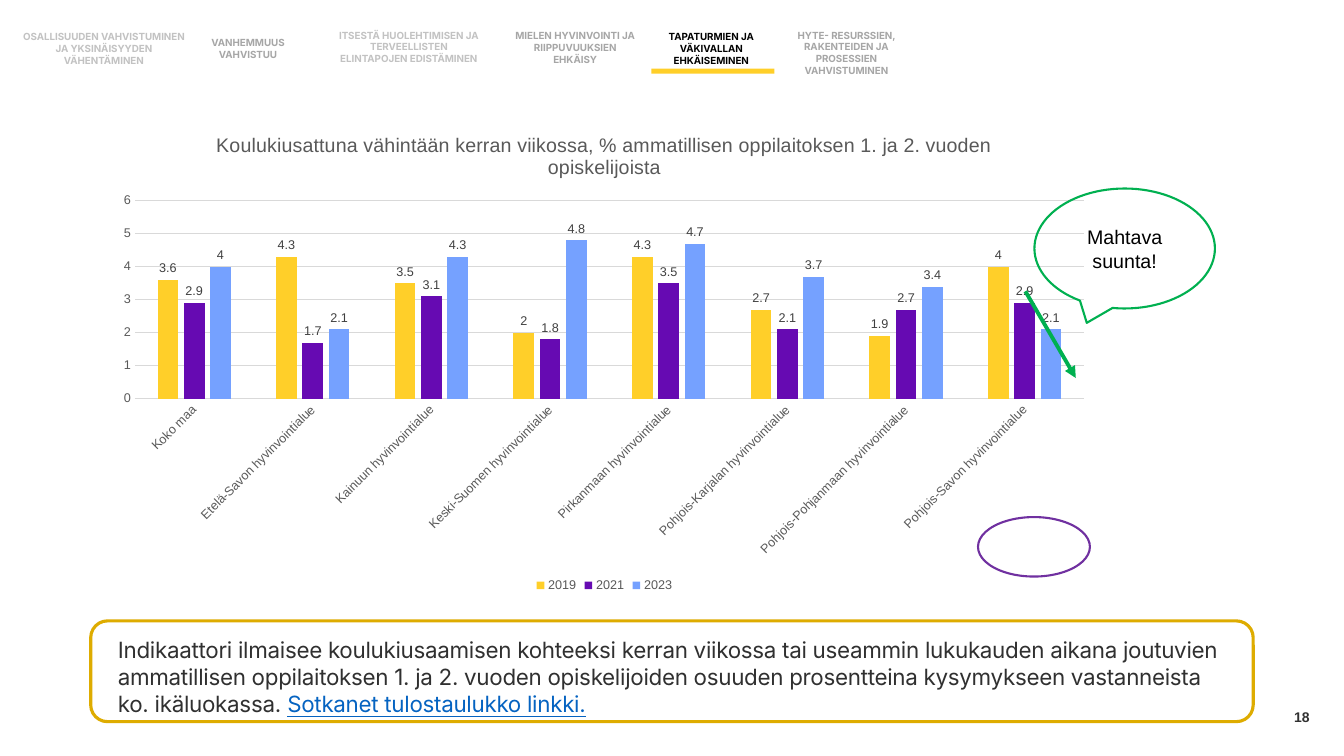
from lxml import etree
from pptx import Presentation
from pptx.chart.data import CategoryChartData
from pptx.dml.color import RGBColor
from pptx.enum.chart import XL_CHART_TYPE, XL_LABEL_POSITION, XL_LEGEND_POSITION, XL_TICK_MARK
from pptx.enum.shapes import MSO_CONNECTOR, MSO_SHAPE
from pptx.enum.text import MSO_ANCHOR, MSO_AUTO_SIZE, PP_ALIGN
from pptx.oxml import parse_xml
from pptx.oxml.ns import nsdecls, qn
from pptx.util import Inches, Pt

YELLOW, VIOLET, BLUE, GREEN = "FFCF29", "660AB2", "75A1FF", "00B050"
GRID, AXIS_TEXT = "D9D9D9", "595959"
LEFT, CENTER, RIGHT = PP_ALIGN.LEFT, PP_ALIGN.CENTER, PP_ALIGN.RIGHT


def rgb(value):
    return RGBColor.from_string(value)


def set_font(font, color, **fmt):
    for name, value in fmt.items():
        setattr(font, name, Pt(value) if name == "size" else value)
    font.color.rgb = rgb(color)


class SlideBuilder:
    def __init__(self, slide):
        self.s = slide

    def fill_text(self, tf, paragraphs, align, color, **fmt):
        tf.word_wrap = True
        for i, text in enumerate(paragraphs):
            p = tf.paragraphs[0] if i == 0 else tf.add_paragraph()
            p.alignment = align
            r = p.add_run()
            r.text = text
            set_font(r.font, color, **fmt)

    def text(self, box, paragraphs, align, color, anchor=MSO_ANCHOR.MIDDLE, grow=False, **fmt):
        tf = self.s.shapes.add_textbox(*map(Inches, box)).text_frame
        for side in ("left", "top", "right", "bottom"):
            setattr(tf, f"margin_{side}", 0)
        tf.vertical_anchor = anchor
        if grow:
            tf.auto_size = MSO_AUTO_SIZE.SHAPE_TO_FIT_TEXT
        self.fill_text(tf, paragraphs, align, color, **fmt)
        return tf

    def shape(self, kind, box, fill=None, line=None, width=1.5):
        sp = self.s.shapes.add_shape(kind, *map(Inches, box))
        sp.shadow.inherit = False
        for part, color in ((sp.fill, fill), (sp.line.fill, line)):
            if color:
                part.solid()
                part.fore_color.rgb = rgb(color)
            else:
                part.background()
        if line:
            sp.line.width = Pt(width)
        return sp

    def arrow(self, start, end, color, width):
        line = self.s.shapes.add_connector(MSO_CONNECTOR.STRAIGHT, *map(Inches, start + end))
        line.line.color.rgb = rgb(color)
        line.line.width = Pt(width)
        etree.SubElement(line.line._get_or_add_ln(), qn("a:tailEnd"), type="triangle")
        etree.SubElement(line._element.spPr, qn("a:effectLst"))

    def column_chart(self, box, title, categories, series, plot_area):
        data = CategoryChartData()
        data.categories = categories
        for name, _, values in series:
            data.add_series(name, values)
        chart = self.s.shapes.add_chart(
            XL_CHART_TYPE.COLUMN_CLUSTERED, *map(Inches, box), data).chart
        set_font(chart.font, "000000", size=10, name="Arial")
        small = {"color": AXIS_TEXT, "size": 9, "name": "Arial"}

        # Title and legend
        self.fill_text(chart.chart_title.text_frame, [title], CENTER, AXIS_TEXT,
                       size=14, name="Arial", bold=False)
        chart.chart_title.include_in_layout = False
        chart.has_legend = True
        chart.legend.position = XL_LEGEND_POSITION.BOTTOM
        chart.legend.include_in_layout = False
        set_font(chart.legend.font, **small)

        # Axes
        for axis in (chart.category_axis, chart.value_axis):
            axis.major_tick_mark = axis.minor_tick_mark = XL_TICK_MARK.NONE
            set_font(axis.tick_labels.font, **small)
        cat, val = chart.category_axis, chart.value_axis
        cat._element.txPr.find(qn("a:bodyPr")).set("rot", "-2700000")
        val.minimum_scale, val.maximum_scale, val.major_unit = 0, 6, 1
        val.format.line.fill.background()
        for line in (cat.format.line, val.major_gridlines.format.line):
            line.color.rgb = rgb(GRID)
            line.width = Pt(0.75)

        # Columns and their values
        plot = chart.plots[0]
        plot.vary_by_categories = False
        plot.gap_width, plot.overlap = 219, -27
        for column, (_, color, _) in zip(plot.series, series):
            column.format.fill.solid()
            column.format.fill.fore_color.rgb = rgb(color)
            labels = column.data_labels
            labels.show_value = True
            labels.position = XL_LABEL_POSITION.OUTSIDE_END
            set_font(labels.font, "404040", size=9, name="Arial")

        # Fixed inner plot area
        area = chart._chartSpace.chart.plotArea
        for old in area.findall(qn("c:layout")):
            area.remove(old)
        sizes = "".join(f'<c:{k} val="{v}"/>' for k, v in zip("xywh", plot_area))
        area.insert(0, parse_xml(
            f'<c:layout {nsdecls("c")}><c:manualLayout><c:layoutTarget val="inner"/>'
            f'<c:xMode val="edge"/><c:yMode val="edge"/>{sizes}</c:manualLayout></c:layout>'))


def main():
    prs = Presentation()
    prs.slide_width, prs.slide_height = Inches(13.33), Inches(7.5)
    b = SlideBuilder(prs.slides.add_slide(prs.slide_layouts[6]))

    # Page number
    b.text((9.99, 6.91, 3, 0.4), ["18"], RIGHT, "313131", size=10, name="Arial", bold=True)

    # Theme navigation, the current theme in black
    themes = [
        ((0.22, 0.36, 1.62, 0.24), "C2C2C2",
         ["OSALLISUUDEN VAHVISTUMINEN JA YKSINÄISYYDEN VÄHENTÄMINEN"]),
        ((1.85, 0.42, 1.22, 0.12), "A6A6A6", ["VANHEMMUUS VAHVISTUU"]),
        ((3.35, 0.29, 1.41, 0.35), "C2C2C2",
         ["ITSESTÄ HUOLEHTIMISEN JA TERVEELLISTEN ELINTAPOJEN EDISTÄMINEN"]),
        ((5.07, 0.35, 1.27, 0.24), "A6A6A6", ["MIELEN HYVINVOINTI JA RIIPPUVUUKSIEN EHKÄISY"]),
        ((6.42, 0.36, 1.27, 0.24), "000000", ["TAPATURMIEN JA VÄKIVALLAN EHKÄISEMINEN"]),
        ((7.69, 0.35, 1.41, 0.35), "A6A6A6",
         ["HYTE- RESURSSIEN, RAKENTEIDEN JA PROSESSIEN", "VAHVISTUMINEN"]),
    ]
    for box, color, paragraphs in themes:
        b.text(box, paragraphs, CENTER, color, grow=True, size=7, name="Inter", bold=True)
    b.shape(MSO_SHAPE.RECTANGLE, (6.46, 0.68, 1.22, 0.05), fill=YELLOW)

    # Indicator description in a frame
    tf = b.text((1.17, 6.31, 10.96, 1.13), [
        "Indikaattori ilmaisee koulukiusaamisen kohteeksi kerran viikossa tai useammin "
        "lukukauden aikana joutuvien ammatillisen oppilaitoksen 1. ja 2. vuoden "
        "opiskelijoiden osuuden prosentteina kysymykseen vastanneista ko. ikäluokassa. "],
        LEFT, "303030", anchor=MSO_ANCHOR.TOP, size=16, name="Inter")
    p = tf.paragraphs[0]
    r = p.add_run()
    r.text = "Sotkanet tulostaulukko linkki."
    set_font(r.font, "0563C1", size=16, name="Inter", underline=True)
    for r in p.runs:
        r.font._element.set("spc", "-20")
    b.shape(MSO_SHAPE.ROUNDED_RECTANGLE, (0.9, 6.16, 11.53, 1), line="DEAC00", width=2.25)

    # Bullying by region and year
    regions = ["Etelä-Savon", "Kainuun", "Keski-Suomen", "Pirkanmaan",
               "Pohjois-Karjalan", "Pohjois-Pohjanmaan", "Pohjois-Savon"]
    b.column_chart(
        (1.04, 1.13, 9.91, 4.79),
        "Koulukiusattuna vähintään kerran viikossa, % ammatillisen oppilaitoksen "
        "1. ja 2. vuoden opiskelijoista",
        ["Koko maa"] + [f"{region} hyvinvointialue" for region in regions],
        [("2019", YELLOW, (3.6, 4.3, 3.5, 2, 4.3, 2.7, 1.9, 4)),
         ("2021", VIOLET, (2.9, 1.7, 3.1, 1.8, 3.5, 2.1, 2.7, 2.9)),
         ("2023", BLUE, (4, 2.1, 4.3, 4.8, 4.7, 3.7, 3.4, 2.1))],
        plot_area=(0.03, 0.18, 0.95, 0.41))

    # Highlights on the last region
    b.shape(MSO_SHAPE.OVAL, (9.7, 5.13, 1.11, 0.59), line="7030A0")
    b.arrow((10.17, 2.89), (10.67, 3.75), GREEN, 2.75)
    callout = b.shape(MSO_SHAPE.OVAL_CALLOUT, (10.26, 1.87, 1.79, 1.19), line=GREEN)
    callout.adjustments[0], callout.adjustments[1] = -0.21, 0.62
    callout.text_frame.vertical_anchor = MSO_ANCHOR.MIDDLE
    b.fill_text(callout.text_frame, ["Mahtava suunta!"], CENTER, "000000", size=14, name="Arial")

    prs.save("out.pptx")


if __name__ == "__main__":
    main()
